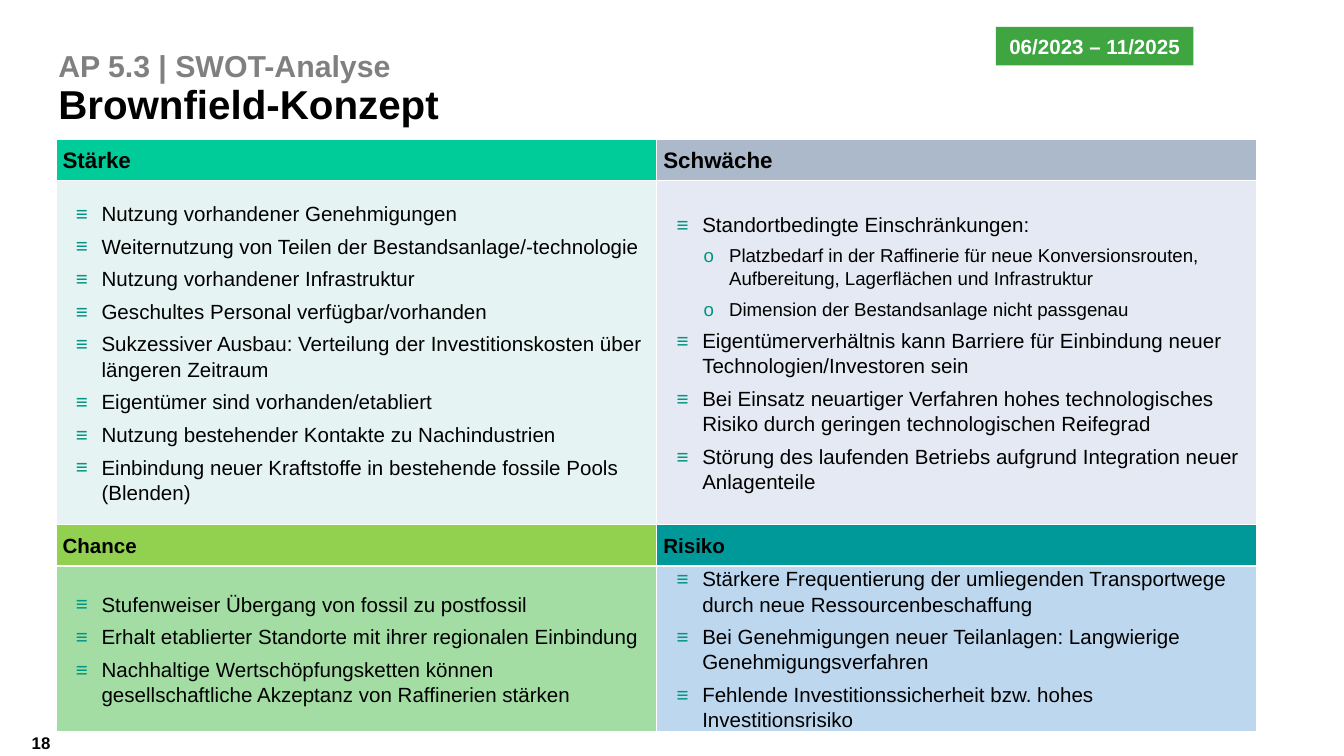
from lxml import etree
from pptx import Presentation
from pptx.dml.color import RGBColor
from pptx.enum.shapes import MSO_SHAPE
from pptx.enum.text import MSO_ANCHOR, PP_ALIGN
from pptx.oxml.ns import qn
from pptx.util import Pt

RECTANGLE = MSO_SHAPE.RECTANGLE
MIDDLE, BOTTOM = MSO_ANCHOR.MIDDLE, MSO_ANCHOR.BOTTOM
LEFT, CENTER = PP_ALIGN.LEFT, PP_ALIGN.CENTER
BULLET_COLOR = "009682"
COLUMN_WIDTH = 321.84
ROW_HEIGHTS = [22.3, 184.3, 22.3, 85]
BULLETS = {0: ("≡", 20.9, 11), 1: ("o", 35.3, 10)}
HANGING = 13.7

QUADRANTS = [
    {"title": "Stärke", "position": (0, 0), "size": 12, "gap": 2,
     "fills": ("00CC99", "E5F4F2"), "points": [
         (0, "Nutzung vorhandener Genehmigungen"),
         (0, "Weiternutzung von Teilen der Bestandsanlage/-technologie"),
         (0, "Nutzung vorhandener Infrastruktur"),
         (0, "Geschultes Personal verfügbar/vorhanden"),
         (0, "Sukzessiver Ausbau: Verteilung der Investitionskosten über längeren Zeitraum"),
         (0, "Eigentümer sind vorhanden/etabliert"),
         (0, "Nutzung bestehender Kontakte zu Nachindustrien"),
         (0, "Einbindung neuer Kraftstoffe in bestehende fossile Pools (Blenden)")]},
    {"title": "Schwäche", "position": (0, 1), "size": 12, "gap": 2,
     "fills": ("ACB9CA", "E5E9F3"), "points": [
         (0, "Standortbedingte Einschränkungen:"),
         (1, "Platzbedarf in der Raffinerie für neue Konversionsrouten, "
             "Aufbereitung, Lagerflächen und Infrastruktur"),
         (1, "Dimension der Bestandsanlage nicht passgenau"),
         (0, "Eigentümerverhältnis kann Barriere für Einbindung neuer "
             "Technologien/Investoren sein"),
         (0, "Bei Einsatz neuartiger Verfahren hohes technologisches Risiko "
             "durch geringen technologischen Reifegrad"),
         (0, "Störung des laufenden Betriebs aufgrund Integration neuer Anlagenteile")]},
    {"title": "Chance", "position": (2, 0), "size": 11, "gap": 0,
     "fills": ("92D050", "A3DDA4"), "points": [
         (0, "Stufenweiser Übergang von fossil zu postfossil"),
         (0, "Erhalt etablierter Standorte mit ihrer regionalen Einbindung"),
         (0, "Nachhaltige Wertschöpfungsketten können gesellschaftliche "
             "Akzeptanz von Raffinerien stärken")]},
    {"title": "Risiko", "position": (2, 1), "size": 11, "gap": 0,
     "fills": ("009999", "BDD7EE"), "points": [
         (0, "Stärkere Frequentierung der umliegenden Transportwege "
             "durch neue Ressourcenbeschaffung"),
         (0, "Bei Genehmigungen neuer Teilanlagen: Langwierige Genehmigungsverfahren"),
         (0, "Fehlende Investitionssicherheit bzw. hohes Investitionsrisiko")]},
]


def color(value):
    """Turn a hex string into a colour."""
    return RGBColor.from_string(value)


def apply_format(target, values):
    """Set each attribute named in a dict on the target."""
    for name, value in values.items():
        setattr(target, name, value)


def add_run(paragraph, text, size, text_color="000000", bold=True):
    """Append a formatted run to a paragraph."""
    run = paragraph.add_run()
    run.text = text
    apply_format(run.font, {"name": "Arial", "size": Pt(size), "bold": bold})
    run.font.color.rgb = color(text_color)


def add_bullet(paragraph, character, indent):
    """Give a paragraph a coloured bullet and a hanging indent."""
    properties = paragraph._p.get_or_add_pPr()
    properties.set("marL", str(Pt(indent)))
    properties.set("indent", str(-Pt(HANGING)))
    bullet_color = etree.SubElement(properties, qn("a:buClr"))
    etree.SubElement(bullet_color, qn("a:srgbClr"), val=BULLET_COLOR)
    etree.SubElement(properties, qn("a:buFont"), typeface="Arial")
    etree.SubElement(properties, qn("a:buChar"), char=character)


def style_cell(cell, fill):
    """Set margins, white borders and fill of a cell."""
    apply_format(cell, {"margin_left": Pt(3.6), "margin_right": Pt(3.6), "margin_top": 0,
                        "margin_bottom": 0, "vertical_anchor": MIDDLE})
    properties = cell._tc.get_or_add_tcPr()
    for side in ("a:lnL", "a:lnR", "a:lnT", "a:lnB"):
        border = etree.SubElement(properties, qn(side), w=str(Pt(1)))
        border_fill = etree.SubElement(border, qn("a:solidFill"))
        etree.SubElement(border_fill, qn("a:srgbClr"), val="FFFFFF")
    cell.fill.solid()
    cell.fill.fore_color.rgb = color(fill)


def fill_header(cell, quadrant):
    """Write the heading of a quadrant."""
    style_cell(cell, quadrant["fills"][0])
    paragraph = cell.text_frame.paragraphs[0]
    apply_format(paragraph, {"line_spacing": 1.07, "space_after": Pt(quadrant["gap"])})
    add_run(paragraph, quadrant["title"], quadrant["size"])


def fill_points(cell, quadrant):
    """Write the bulleted points of a quadrant."""
    style_cell(cell, quadrant["fills"][1])
    frame = cell.text_frame
    for index, (level, text) in enumerate(quadrant["points"]):
        paragraph = frame.add_paragraph() if index else frame.paragraphs[0]
        character, indent, size = BULLETS[level]
        add_bullet(paragraph, character, indent)
        apply_format(paragraph, {"line_spacing": 1.1, "space_before": Pt(2 if index else 0),
                                 "space_after": Pt(2)})
        add_run(paragraph, text, size, bold=False)


def add_swot_table(slide):
    """Add the table with the four quadrants."""
    table = slide.shapes.add_table(len(ROW_HEIGHTS), 2, Pt(29.9), Pt(74.4),
                                   Pt(2 * COLUMN_WIDTH), Pt(sum(ROW_HEIGHTS))).table
    apply_format(table, {"first_row": False, "horz_banding": False})
    for column in table.columns:
        column.width = Pt(COLUMN_WIDTH)
    for row, height in zip(table.rows, ROW_HEIGHTS):
        row.height = Pt(height)
    for quadrant in QUADRANTS:
        row, column = quadrant["position"]
        fill_header(table.cell(row, column), quadrant)
        fill_points(table.cell(row + 1, column), quadrant)


def add_text_box(slide, box, anchor):
    """Add a wrapping text box without margins and return its paragraph."""
    frame = slide.shapes.add_textbox(*map(Pt, box)).text_frame
    apply_format(frame, {"word_wrap": True, "vertical_anchor": anchor, "margin_left": 0,
                         "margin_right": 0, "margin_top": 0, "margin_bottom": 0})
    paragraph = frame.paragraphs[0]
    paragraph.alignment = LEFT
    return paragraph


def add_title(slide):
    """Add the two-line title."""
    paragraph = add_text_box(slide, (31.2, 23.2, 540.7, 45.4), BOTTOM)
    paragraph.line_spacing = 0.9
    add_run(paragraph, "AP 5.3 | SWOT-Analyse", 16.2, "808080")
    paragraph.add_line_break()
    add_run(paragraph, "Brownfield-Konzept", 21.6)


def add_period_badge(slide):
    """Add the green badge with the project period."""
    shape = slide.shapes.add_shape(RECTANGLE, Pt(533.5), Pt(14.4), Pt(105.9), Pt(20.6))
    shape.shadow.inherit = False
    shape.fill.solid()
    shape.fill.fore_color.rgb = color("3EA540")
    shape.line.fill.background()
    apply_format(shape.text_frame, {"word_wrap": False, "vertical_anchor": MIDDLE})
    paragraph = shape.text_frame.paragraphs[0]
    paragraph.alignment = CENTER
    add_run(paragraph, "06/2023 – 11/2025", 11, "FFFFFF")


def main():
    """Build and save the presentation."""
    presentation = Presentation()
    apply_format(presentation, {"slide_width": Pt(720), "slide_height": Pt(405)})
    slide = presentation.slides.add_slide(presentation.slide_layouts[6])
    add_swot_table(slide)
    add_run(add_text_box(slide, (17, 382.3, 25.9, 31), MIDDLE), "18", 9)
    add_title(slide)
    add_period_badge(slide)
    presentation.save("out.pptx")


if __name__ == "__main__":
    main()
